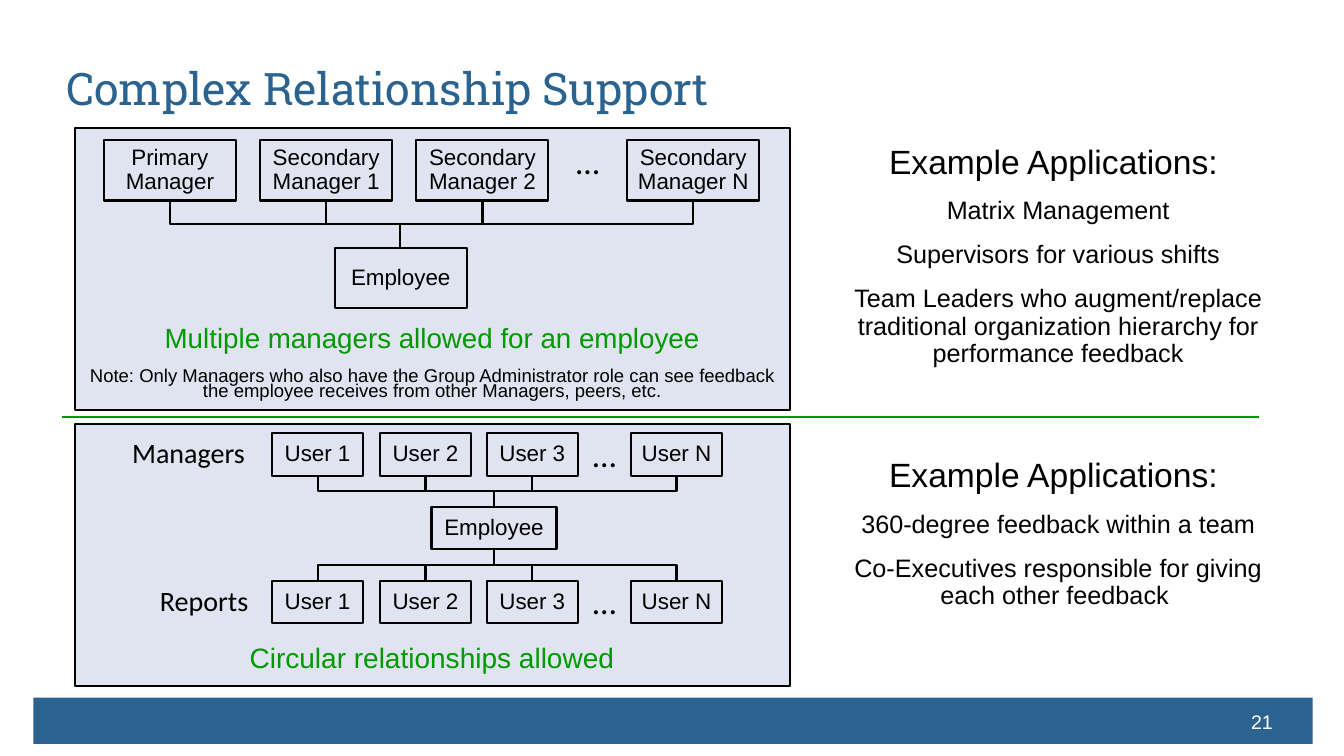
from pptx import Presentation
from pptx.dml.color import RGBColor
from pptx.enum.shapes import MSO_CONNECTOR as Connector, MSO_SHAPE as Shape
from pptx.enum.text import MSO_ANCHOR as Anchor, PP_ALIGN as Align
from pptx.oxml.ns import qn
from pptx.oxml.xmlchemy import OxmlElement
from pptx.util import Inches, Pt

BLACK, WHITE, GREEN, BLUE, PANEL = "000000", "FFFFFF", "009900", "2A638F", "DFE4F0"


def color(value):
    return RGBColor.from_string(value)


def add_text(box, lines, font="Arial", hue=BLACK, align=Align.CENTER,
             anchor=Anchor.TOP, spacing=0.9, after=0, inset=0.1):
    """Fill a shape or text box with (text, size) lines, one paragraph each."""
    frame = box.text_frame
    margins = {"margin_left": Inches(inset), "margin_right": Inches(inset)}
    for name, value in {"word_wrap": True, "vertical_anchor": anchor, **margins}.items():
        setattr(frame, name, value)
    for index, (text, size) in enumerate(lines):
        paragraph = frame.add_paragraph() if index else frame.paragraphs[0]
        paragraph.text = text
        layout = {"alignment": align, "line_spacing": spacing, "space_after": Pt(after)}
        for name, value in layout.items():
            setattr(paragraph, name, value)
        paragraph.font.name = font
        paragraph.font.size = Pt(size)
        paragraph.font.color.rgb = color(hue)


presentation = Presentation()
presentation.slide_width = Inches(13.33)
presentation.slide_height = Inches(7.5)
slide = presentation.slides.add_slide(presentation.slide_layouts[6])
shapes = slide.shapes

# Footer bar and the two panels
for left, top, width, height, fill, line in [
    (0.33, 6.92, 12.69, 0.46, BLUE, None),
    (0.74, 1.27, 7.1, 2.8, PANEL, BLACK),
    (0.74, 4.21, 7.1, 2.6, PANEL, BLACK),
]:
    panel = shapes.add_shape(Shape.RECTANGLE, *map(Inches, (left, top, width, height)))
    panel.shadow.inherit = False
    panel.fill.solid()
    panel.fill.fore_color.rgb = color(fill)
    if line:
        panel.line.color.rgb = color(line)
        panel.line.width = Pt(1.5)
    else:
        panel.line.fill.background()

# Title, captions, row labels, example applications and page number
for left, top, width, height, lines, style in [
    (0.56, 0.27, 12.22, 0.92, [("Complex Relationship Support", 32)],
     {"font": "Roboto Slab", "hue": BLUE, "align": Align.LEFT, "anchor": Anchor.BOTTOM}),
    (0.74, 6.34, 7.09, 0.47, [("Circular relationships allowed", 20)], {"hue": GREEN}),
    (1.21, 4.31, 1.32, 0.37, [("Managers", 20)], {"font": "Calibri"}),
    (1.48, 5.78, 1.09, 0.37, [("Reports", 20)], {"font": "Calibri"}),
    (8.21, 1.39, 4.57, 2.49, [
        ("Example Applications: ", 24),
        ("Matrix Management", 18),
        ("Supervisors for various shifts", 18),
        ("Team Leaders who augment/replace traditional organization hierarchy "
         "for performance feedback", 18)], {"after": 12}),
    (8.21, 4.5, 4.57, 2.04, [
        ("Example Applications: ", 24),
        ("360-degree feedback within a team", 18),
        ("Co-Executives responsible for giving each other feedback ", 18)], {"after": 12}),
    (12.31, 6.99, 0.5, 0.33, [("21", 14)],
     {"hue": WHITE, "align": Align.LEFT, "anchor": Anchor.MIDDLE, "spacing": 1}),
]:
    add_text(shapes.add_textbox(*map(Inches, (left, top, width, height))), lines, **style)

caption = shapes.add_textbox(Inches(0.74), Inches(3.22), Inches(7.09), Inches(0.83))
add_text(caption, [
    ("Multiple managers allowed for an employee", 19.8),
    ("Note: Only Managers who also have the Group Administrator role can see feedback "
     "the employee receives from other Managers, peers, etc.", 13.2),
], hue=GREEN, spacing=0.7, after=12)
caption.text_frame.paragraphs[1].font.color.rgb = color(BLACK)

# Organization charts: each row of people is joined to one employee
managers = ["Primary Manager", "Secondary Manager 1", "Secondary Manager 2", "Secondary Manager N"]
users = ["User 1", "User 2", "User 3", "User N"]
manager_lefts = [1.03, 2.58, 4.13, 6.22]
user_lefts = [2.7, 3.77, 4.83, 6.26]

boxes = [("Employee", 3.32, 2.46, 1.31, 0.6), ("Employee", 4.28, 5.03, 1.24, 0.42)]
dots = []
links = []
for names, lefts, top, width, height, employee_x, employee_y in [
    (managers, manager_lefts, 1.39, 1.31, 0.6, 3.97, 2.46),
    (users, user_lefts, 4.3, 0.9, 0.42, 4.9, 5.03),
    (users, user_lefts, 5.76, 0.9, 0.42, 4.9, 5.45),
]:
    dots.append((lefts[2] + width, top, lefts[3] - lefts[2] - width))
    for name, left in zip(names, lefts):
        boxes.append((name, left, top, width, height))
        center = left + width / 2
        if top < employee_y:
            links.append((center, top + height, employee_x, employee_y))
        else:
            links.append((employee_x, employee_y, center, top))

for name, *place in boxes:
    box = shapes.add_shape(Shape.RECTANGLE, *map(Inches, place))
    box.shadow.inherit = False
    box.fill.background()
    box.line.color.rgb = color(BLACK)
    box.line.width = Pt(1.5)
    add_text(box, [(name, 16)], anchor=Anchor.MIDDLE, inset=0.05)

for left, top, width in dots:
    ellipsis = shapes.add_textbox(Inches(left), Inches(top), Inches(width), Inches(0.38))
    add_text(ellipsis, [("…", 24)], font="Calibri")

# Elbows are laid out sideways and turned a quarter, so they leave vertically
connectors = []
for begin_x, begin_y, end_x, end_y in links:
    middle_x, middle_y = (begin_x + end_x) / 2, (begin_y + end_y) / 2
    half_x, half_y = (end_x - begin_x) / 2, (end_y - begin_y) / 2
    elbow = shapes.add_connector(Connector.ELBOW, *map(Inches, (
        middle_x - half_y, middle_y + half_x, middle_x + half_y, middle_y - half_x)))
    elbow._element.spPr.find(qn("a:xfrm")).set("rot", "5400000")
    connectors.append((elbow, BLACK))

divider = shapes.add_connector(
    Connector.STRAIGHT, Inches(0.62), Inches(4.14), Inches(12.49), Inches(4.14))
connectors.append((divider, GREEN))

for connector, hue in connectors:
    connector.line.color.rgb = color(hue)
    connector.line.width = Pt(1.5)
    connector._element.spPr.append(OxmlElement("a:effectLst"))

presentation.save("out.pptx")
